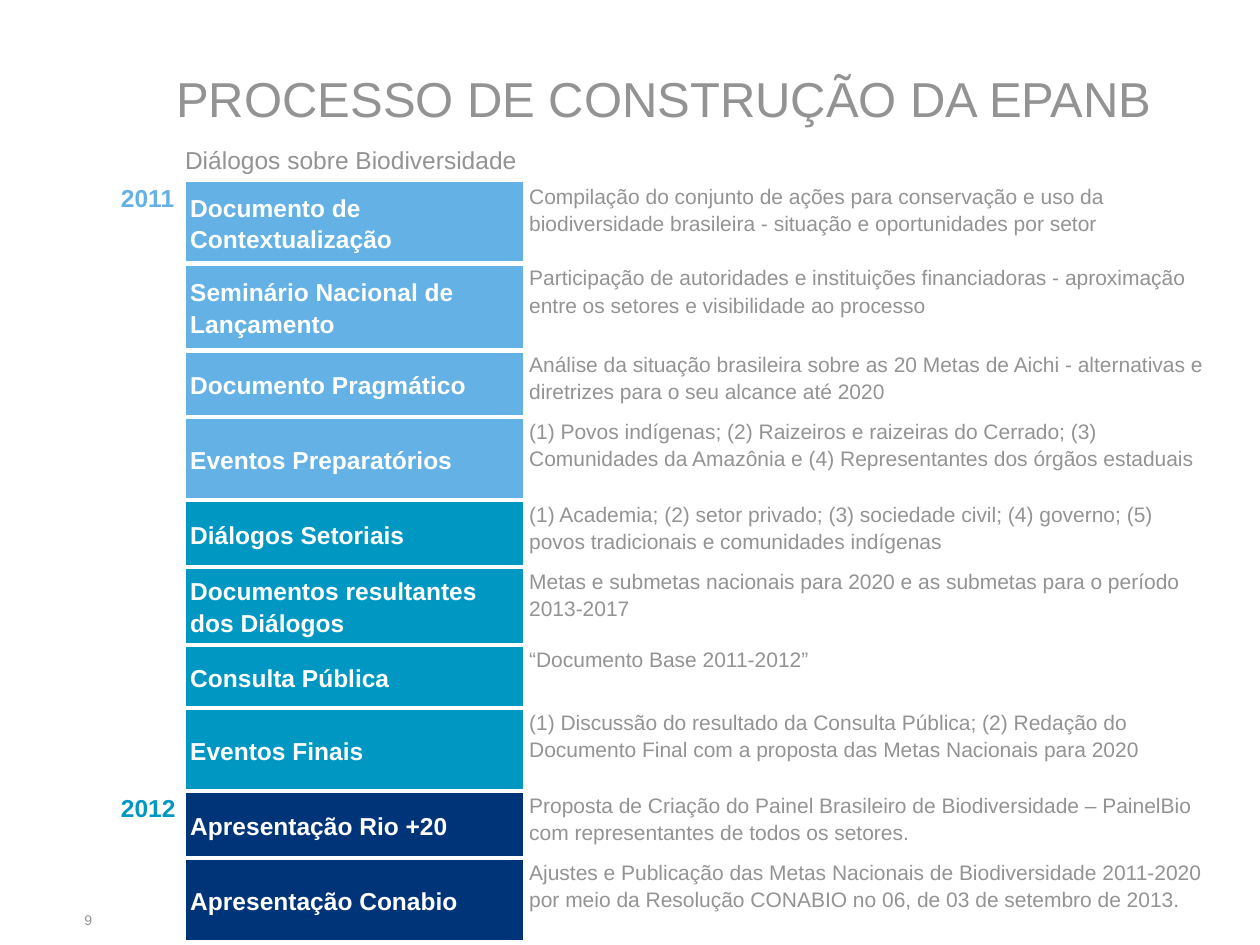
from lxml.etree import SubElement
from pptx import Presentation
from pptx.dml.color import RGBColor
from pptx.enum.text import MSO_ANCHOR as Anchor, MSO_AUTO_SIZE as AutoSize, PP_ALIGN as Align
from pptx.oxml.ns import qn
from pptx.util import Inches, Pt

COLOURS = {
    "white": "FFFFFF",
    "grey": "939393",
    "sky": "63B1E5",
    "teal": "0098C3",
    "navy": "003478",
}
COLUMN_WIDTHS = [0.55, 2.69, 5.49]

# Height, colour, stage, description
STAGES = [
    (0.65, "sky", "Documento de Contextualização",
     "Compilação do conjunto de ações para conservação e uso da biodiversidade brasileira"
     " - situação e oportunidades por setor"),
    (0.69, "sky", "Seminário Nacional de Lançamento",
     "Participação de autoridades e instituições financiadoras - aproximação entre os setores"
     " e visibilidade ao processo"),
    (0.53, "sky", "Documento Pragmático",
     "Análise da situação brasileira sobre as 20 Metas de Aichi - alternativas e diretrizes"
     " para o seu alcance até 2020"),
    (0.66, "sky", "Eventos Preparatórios",
     "(1) Povos indígenas; (2) Raizeiros e raizeiras do Cerrado; (3) Comunidades da Amazônia"
     " e (4) Representantes dos órgãos estaduais"),
    (0.53, "teal", "Diálogos Setoriais",
     "(1) Academia; (2) setor privado; (3) sociedade civil; (4) governo; (5) povos"
     " tradicionais e comunidades indígenas"),
    (0.62, "teal", "Documentos resultantes dos Diálogos",
     "Metas e submetas nacionais para 2020 e as submetas para o período 2013-2017"),
    (0.5, "teal", "Consulta Pública", "“Documento Base 2011-2012”"),
    (0.66, "teal", "Eventos Finais",
     "(1) Discussão do resultado da Consulta Pública; (2) Redação do Documento Final com a"
     " proposta das Metas Nacionais para 2020"),
    (0.53, "navy", "Apresentação Rio +20",
     "Proposta de Criação do Painel Brasileiro de Biodiversidade – PainelBio com"
     " representantes de todos os setores."),
    (0.66, "navy", "Apresentação Conabio",
     "Ajustes e Publicação das Metas Nacionais de Biodiversidade 2011-2020 por meio da"
     " Resolução CONABIO no 06, de 03 de setembro de 2013."),
]
# Year, colour, first row, last row
YEARS = [("2011", "sky", 0, 7), ("2012", "teal", 8, 9)]


class SlideBuilder:
    font = "Arial"

    def __init__(self, slide):
        self.slide = slide

    def add_text(self, paragraph, text, size, colour="grey", bold=False):
        run = paragraph.add_run()
        run.text = text
        run.font.name = self.font
        run.font.size = Pt(size)
        run.font.bold = bold
        run.font.color.rgb = RGBColor.from_string(COLOURS[colour])

    def remove_margins(self, frame):
        frame.margin_left = frame.margin_right = 0
        frame.margin_top = frame.margin_bottom = 0

    def title(self, text, left, top, width, height):
        title = self.slide.shapes.title
        title.left, title.top = Inches(left), Inches(top)
        title.width, title.height = Inches(width), Inches(height)
        frame = title.text_frame
        self.remove_margins(frame)
        frame.auto_size = AutoSize.NONE
        frame.vertical_anchor = Anchor.MIDDLE
        frame.paragraphs[0].alignment = Align.LEFT
        self.add_text(frame.paragraphs[0], text, 28)

    def subtitle(self, text, left, top, width, height):
        frame = self.text_frame(left, top, width, height)
        frame.word_wrap = False
        frame.auto_size = AutoSize.SHAPE_TO_FIT_TEXT
        self.add_text(frame.paragraphs[0], text, 14)

    def page_number(self, text, left, top, width, height):
        frame = self.text_frame(left, top, width, height)
        frame.word_wrap = True
        self.remove_margins(frame)
        frame.vertical_anchor = Anchor.MIDDLE
        self.add_text(frame.paragraphs[0], text, 8)

    def text_frame(self, left, top, width, height):
        return self.slide.shapes.add_textbox(
            Inches(left), Inches(top), Inches(width), Inches(height)).text_frame

    def table(self, left, top, widths, heights):
        table = self.slide.shapes.add_table(
            len(heights), len(widths), Inches(left), Inches(top),
            Inches(sum(widths)), Inches(sum(heights))).table
        table.first_row = table.horz_banding = False
        for column, width in zip(table.columns, widths):
            column.width = Inches(width)
        for row, height in zip(table.rows, heights):
            row.height = Inches(height)
        return table

    def cell_frame(self, cell, fill, borders):
        """Fill a cell and give it white borders: left, right, top, bottom in points."""
        properties = cell._tc.get_or_add_tcPr()
        for side, width in zip("LRTB", borders):
            line = SubElement(properties, qn(f"a:ln{side}"), w=str(Pt(width)))
            solid = SubElement(line, qn("a:solidFill"))
            SubElement(solid, qn("a:srgbClr"), val=COLOURS["white"])
        cell.fill.solid()
        cell.fill.fore_color.rgb = RGBColor.from_string(COLOURS[fill])
        cell.margin_left = cell.margin_right = Inches(0.04)
        cell.margin_top = cell.margin_bottom = 0

    def cell_text(self, cell, text, size, colour="grey", bold=False, anchor=Anchor.TOP):
        cell.vertical_anchor = anchor
        paragraph = cell.text_frame.paragraphs[0]
        paragraph.line_spacing = 1.15
        self.add_text(paragraph, text, size, colour, bold)

    def timeline(self, left, top):
        table = self.table(left, top, COLUMN_WIDTHS, [stage[0] for stage in STAGES])
        last = len(STAGES) - 1
        for row, (_, colour, stage, description) in enumerate(STAGES):
            year_cell, stage_cell, description_cell = (table.cell(row, i) for i in range(3))
            above = 1 if row == 0 else 3
            below = 1 if row == last else 3
            self.cell_frame(year_cell, "white", (1, 0.25, 1, 1))
            self.cell_frame(stage_cell, colour, (0.25, 1, above, below))
            self.cell_frame(description_cell, "white", (1, 1, above, below))
            self.cell_text(stage_cell, stage, 14, "white", True, Anchor.MIDDLE)
            self.cell_text(description_cell, description, 12)
        for year, colour, first_row, last_row in YEARS:
            year_cell = table.cell(first_row, 0)
            year_cell.merge(table.cell(last_row, 0))
            self.cell_text(year_cell, year, 14, colour, True)


def main():
    presentation = Presentation()
    presentation.slide_width, presentation.slide_height = Inches(10), Inches(7.5)
    title_only = presentation.slide_layouts[5]
    builder = SlideBuilder(presentation.slides.add_slide(title_only))
    builder.page_number("9", 0.67, 7.1, 0.42, 0.4)
    builder.timeline(0.92, 1.44)
    builder.title("PROCESSO DE CONSTRUÇÃO DA EPANB", 1.4, 0.53, 8.6, 0.49)
    builder.subtitle("Diálogos sobre Biodiversidade", 1.37, 1.1, 2.85, 0.34)
    presentation.save("out.pptx")


if __name__ == "__main__":
    main()
